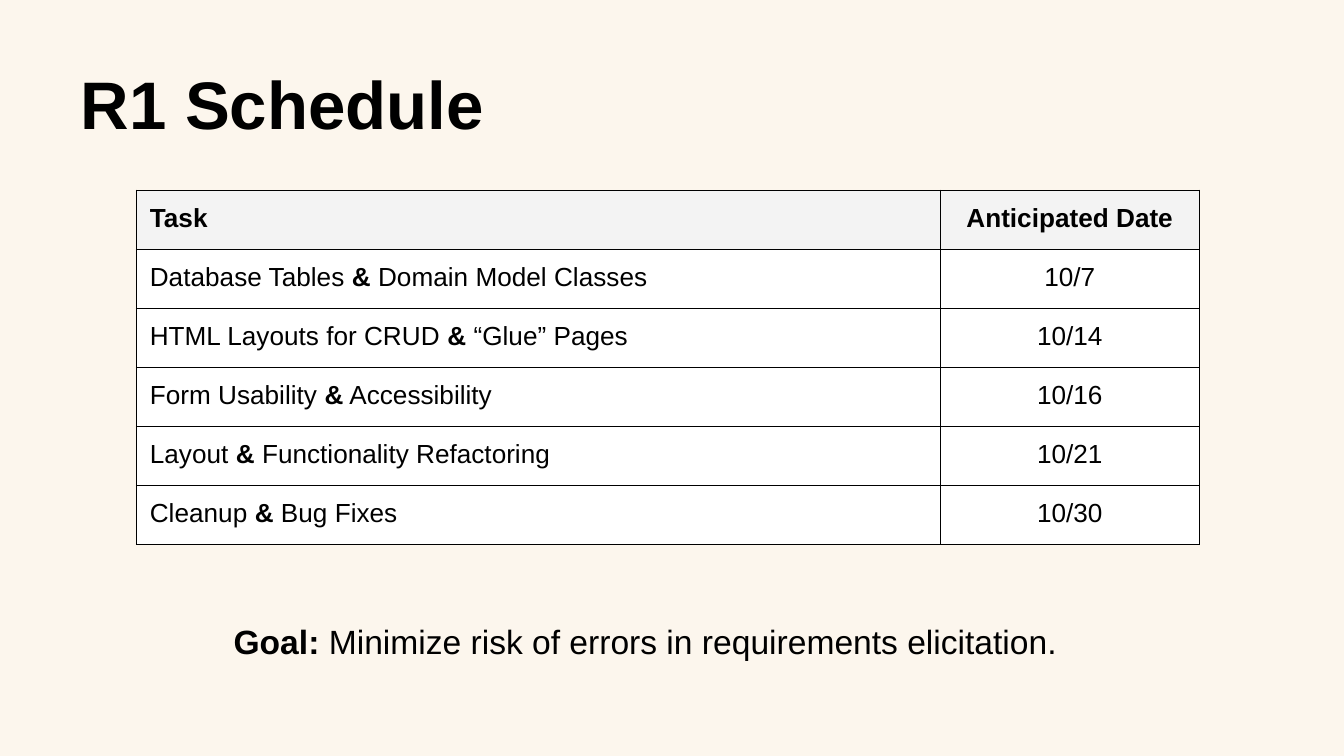
"""Build the R1 schedule slide with its task table and goal line."""
from typing import NamedTuple

from lxml.etree import SubElement
from pptx import Presentation
from pptx.dml.color import RGBColor
from pptx.enum.text import MSO_ANCHOR as Anchor, MSO_AUTO_SIZE as AutoSize, PP_ALIGN as Align
from pptx.oxml.ns import qn
from pptx.util import Emu, Pt

FONT = "Arial"
INK, CREAM, GREY, WHITE = "000000", "FCF6ED", "F3F3F3", "FFFFFF"
EMU_PER_PX = 4572
PADDING = 20
ROW_HEIGHT = 88
COLUMN_WIDTHS = (1196, 386)


class Span(NamedTuple):
    text: str
    bold: bool = False


class Box(NamedTuple):
    left: int
    top: int
    width: int
    height: int


class Task(NamedTuple):
    first: str
    second: str
    date: str


TASKS = (
    Task("Database Tables", "Domain Model Classes", "10/7"),
    Task("HTML Layouts for CRUD", "“Glue” Pages", "10/14"),
    Task("Form Usability", "Accessibility", "10/16"),
    Task("Layout", "Functionality Refactoring", "10/21"),
    Task("Cleanup", "Bug Fixes", "10/30"),
)


def px(length: int) -> Emu:
    return Emu(length * EMU_PER_PX)


def color(value: str) -> RGBColor:
    return RGBColor.from_string(value)


def write(paragraph, spans: tuple[Span, ...], size: int, align=Align.LEFT) -> None:
    paragraph.alignment = align
    for span in spans:
        run = paragraph.add_run()
        run.text = span.text
        run.font.name, run.font.size, run.font.bold = FONT, Pt(size), span.bold
        run.font.color.rgb = color(INK)


def pad(holder) -> None:
    holder.margin_left = holder.margin_right = px(PADDING)
    holder.margin_top = holder.margin_bottom = px(PADDING)


def add_borders(cell) -> None:
    properties = cell._tc.get_or_add_tcPr()
    for side in ("lnL", "lnR", "lnT", "lnB"):
        line = SubElement(properties, qn(f"a:{side}"), w=str(Pt(0.75)))
        fill = SubElement(line, qn("a:solidFill"))
        SubElement(fill, qn("a:srgbClr"), val=INK)


def fill_cell(cell, spans: tuple[Span, ...], fill: str, align) -> None:
    pad(cell)
    add_borders(cell)
    cell.fill.solid()
    cell.fill.fore_color.rgb = color(fill)
    write(cell.text_frame.paragraphs[0], spans, 14, align)


def place_text(shape, box: Box, spans: tuple[Span, ...], size: int, anchor) -> None:
    shape.left, shape.top, shape.width, shape.height = map(px, box)
    frame = shape.text_frame
    frame.word_wrap = True
    frame.auto_size = AutoSize.NONE
    frame.vertical_anchor = anchor
    pad(frame)
    write(frame.paragraphs[0], spans, size)


def add_schedule(slide, left: int, top: int) -> None:
    rows = [((Span("Task", True),), (Span("Anticipated Date", True),))]
    for task in TASKS:
        label = (Span(f"{task.first} "), Span("&", True), Span(f" {task.second}"))
        rows.append((label, (Span(task.date),)))
    box = Box(left, top, sum(COLUMN_WIDTHS), ROW_HEIGHT * len(rows))
    schedule = slide.shapes.add_table(len(rows), len(COLUMN_WIDTHS), *map(px, box)).table
    for column, width in zip(schedule.columns, COLUMN_WIDTHS):
        column.width = px(width)
    for row_index, row in enumerate(rows):
        fill = WHITE if row_index else GREY
        for column_index, (spans, align) in enumerate(zip(row, (Align.LEFT, Align.CENTER))):
            fill_cell(schedule.cell(row_index, column_index), spans, fill, align)


def main() -> None:
    deck = Presentation()
    deck.slide_width, deck.slide_height = px(2000), px(1125)
    slide = deck.slides.add_slide(deck.slide_layouts[5])
    slide.background.fill.solid()
    slide.background.fill.fore_color.rgb = color(CREAM)

    place_text(slide.shapes.title, Box(100, 45, 1800, 188),
               (Span("R1 Schedule", True),), 36, Anchor.BOTTOM)
    add_schedule(slide, 203, 283)
    goal_box = Box(328, 904, 1338, 166)
    goal = slide.shapes.add_textbox(*map(px, goal_box))
    place_text(goal, goal_box,
               (Span("Goal: ", True),
                Span("Minimize risk of errors in requirements elicitation.")),
               18, Anchor.TOP)
    deck.save("out.pptx")


if __name__ == "__main__":
    main()
